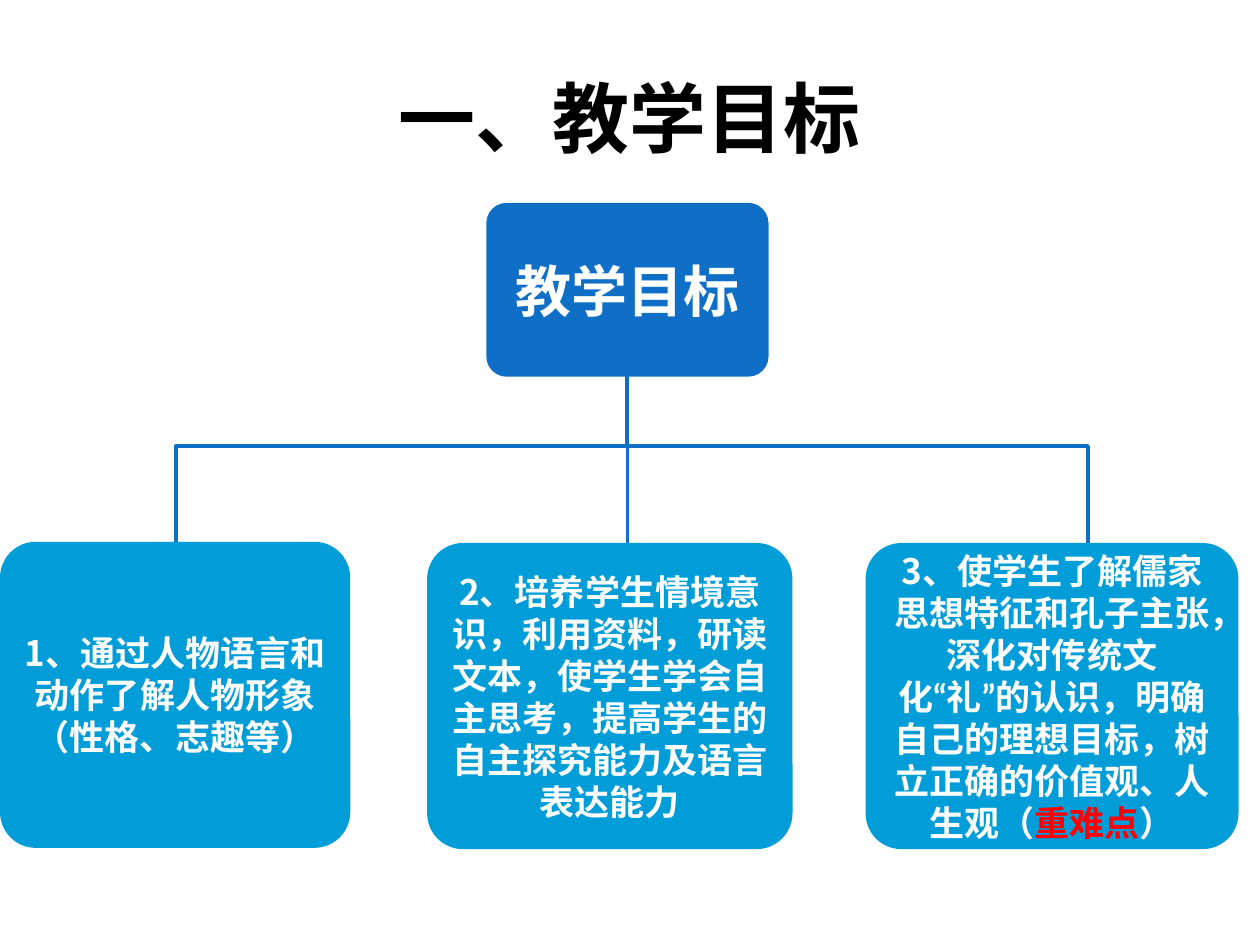
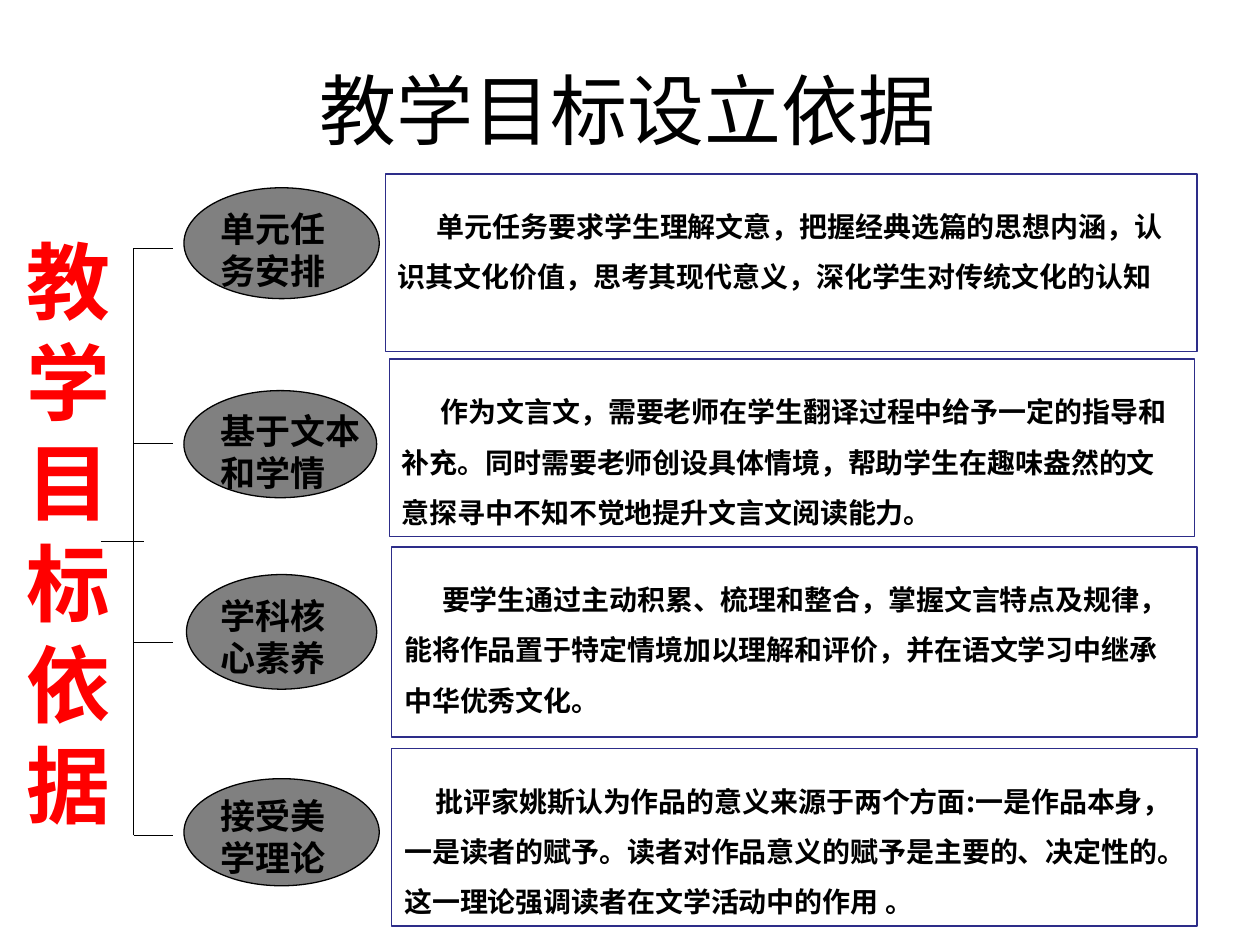
import pptx
import pptx.util
import pptx.dml.color
import pptx.enum.shapes
import pptx.enum.text
import pptx.oxml
import pptx.oxml.ns

PX = 9144
RGB = pptx.dml.color.RGBColor
BLACK = RGB(0x00, 0x00, 0x00)
WHITE = RGB(0xFF, 0xFF, 0xFF)
RED = RGB(0xFF, 0x00, 0x00)
BLUE = RGB(0x0F, 0x6F, 0xC6)
CYAN = RGB(0x00, 0x9D, 0xD9)
GRAY = RGB(0x80, 0x80, 0x80)
NAVY = RGB(0x2D, 0x2D, 0x89)
CJK, LATO, ARIAL = "Noto Sans CJK SC", "Lato", "Arial"
SHAPE = pptx.enum.shapes.MSO_SHAPE
LINK = pptx.enum.shapes.MSO_CONNECTOR
ALIGN = pptx.enum.text.PP_ALIGN
ANCHOR = pptx.enum.text.MSO_ANCHOR


class Deck:
    """Presentation style and the slide being filled."""

    def __init__(self):
        self.prs = pptx.Presentation()
        self.prs.slide_width, self.prs.slide_height = 1000 * PX, 750 * PX

    def slide(self, title, left, top, bold):
        self.s = self.prs.slides.add_slide(self.prs.slide_layouts[6])
        self.text(left, top, 900, 125, [(title, BLACK)], 44, ARIAL, bold,
                  ALIGN.CENTER, ANCHOR.MIDDLE)

    def fill_text(self, sp, runs, size, font, bold=True, align=ALIGN.LEFT,
                  anchor=ANCHOR.TOP, top=5, indent=0, spacing=None):
        tf = sp.text_frame
        frame = dict(word_wrap=True, vertical_anchor=anchor,
                     margin_left=10 * PX, margin_right=10 * PX,
                     margin_top=top * PX, margin_bottom=5 * PX)
        for name, value in frame.items():
            setattr(tf, name, value)
        p = tf.paragraphs[0]
        p.alignment, p.line_spacing = align, spacing
        if indent:
            p._p.get_or_add_pPr().set("indent", str(indent * PX))
        fmt = dict(size=pptx.util.Pt(size), bold=bold, name=font)
        for text, color in runs:
            r = p.add_run()
            r.text = text
            for name, value in fmt.items():
                setattr(r.font, name, value)
            r.font.color.rgb = color
            ea = pptx.oxml.parse_xml(
                f'<a:ea {pptx.oxml.ns.nsdecls("a")} typeface="{LATO}"/>')
            r._r.get_or_add_rPr().append(ea)

    def text(self, x, y, w, h, *args, **kwargs):
        sp = self.s.shapes.add_textbox(x * PX, y * PX, w * PX, h * PX)
        self.fill_text(sp, *args, **kwargs)

    def shape(self, kind, x, y, w, h, fill=None, line=None):
        sp = self.s.shapes.add_shape(kind, x * PX, y * PX, w * PX, h * PX)
        sp.shadow.inherit = False
        if fill is None:
            sp.fill.background()
        else:
            sp.fill.solid()
            sp.fill.fore_color.rgb = fill
        if line is None:
            sp.line.fill.background()
        else:
            sp.line.color.rgb = line
            sp.line.width = pptx.util.Pt(0.75)
        return sp

    def card(self, x, y, w, h, fill, runs, size):
        sp = self.shape(SHAPE.ROUNDED_RECTANGLE, x, y, w, h, fill)
        sp.adjustments[0] = 0.117
        self.fill_text(sp, runs, size, CJK, align=ALIGN.CENTER, anchor=ANCHOR.MIDDLE)

    def line(self, x1, y1, x2, y2, color=BLACK, width=0.75, kind=LINK.STRAIGHT):
        c = self.s.shapes.add_connector(kind, x1 * PX, y1 * PX, x2 * PX, y2 * PX)
        c.line.color.rgb = color
        c.line.width = pptx.util.Pt(width)
        c._element.spPr.append(pptx.oxml.parse_xml(
            f'<a:effectLst {pptx.oxml.ns.nsdecls("a")}/>'))
        return c

    def branch(self, x1, y1, x2, y2):
        w, h = y2 - y1, abs(x2 - x1)
        x, y = (x1 + x2 - w) // 2, (y1 + y2 - h) // 2
        c = self.line(x, y, x + w, y + h, BLUE, 2, LINK.ELBOW)
        turn = dict(rot="16200000", flipH="1") if x2 > x1 else dict(rot="5400000")
        for name, value in turn.items():
            c._element.spPr.xfrm.set(name, value)


def goals(d):
    d.slide("一、教学目标", 50, 30, True)
    d.line(498, 299, 498, 445, BLUE, 2)
    d.branch(498, 264, 864, 445)
    d.branch(498, 264, 140, 445)
    d.card(386, 161, 224, 138, BLUE, [("教学目标", WHITE)], 32)
    cards = [
        (0, 430, 278, [("1、通过人物语言和动作了解人物形象（性格、志趣等）", WHITE)]),
        (339, 431, 290, [("2、培养学生情境意识，利用资料，研读文本，使学生学会自主思考，"
                          "提高学生的自主探究能力及语言表达能力", WHITE)]),
        (687, 431, 296, [("3、使学生了解儒家思想特征和孔子主张，深化对传统文化“礼”的认识，"
                          "明确自己的理想目标，树立正确的价值观、人生观（", WHITE),
                         ("重难点", RED), ("）", WHITE)]),
    ]
    for x, y, w, runs in cards:
        d.card(x, y, w, 243, CYAN, runs, 20)


def grounds(d):
    d.slide("教学目标设立依据", 48, 24, False)
    d.line(80, 430, 114, 430)
    d.line(106, 663, 106, 197)
    for y in (197, 352, 510, 663):
        d.line(106, y, 137, y)
    rows = [
        ((146, 149, 155, 88), (160, 123), "单元任务安排", LATO,
         (306, 138, 644, 141), 31, LATO,
         "单元任务要求学生理解文意，把握经典选篇的思想内涵，认识其文化价值，"
         "思考其现代意义，深化学生对传统文化的认知"),
        ((146, 310, 153, 85), (320, 134), "基于文本和学情", CJK,
         (309, 285, 639, 141), 31, CJK,
         "作为文言文，需要老师在学生翻译过程中给予一定的指导和补充。同时需要老师创设具体情境，"
         "帮助学生在趣味盎然的文意探寻中不知不觉地提升文言文阅读能力。"),
        ((148, 456, 151, 91), (467, 114), "学科核心素养", CJK,
         (311, 434, 639, 151), 30, CJK,
         "要学生通过主动积累、梳理和整合，掌握文言特点及规律，能将作品置于特定情境加以理解和评价，"
         "并在语文学习中继承中华优秀文化。"),
        ((146, 618, 155, 85), (626, 118), "接受美学理论", CJK,
         (311, 594, 639, 141), 25, CJK,
         "批评家姚斯认为作品的意义来源于两个方面:一是作品本身，一是读者的赋予。"
         "读者对作品意义的赋予是主要的、决定性的。这一理论强调读者在文学活动中的作用 。"),
    ]
    for oval, (y, w), label, label_font, box, indent, font, body in rows:
        d.shape(SHAPE.OVAL, *oval, GRAY, BLACK)
        d.text(165, y, w, 77, [(label, BLACK)], 20, label_font)
        sp = d.shape(SHAPE.RECTANGLE, *box, line=NAVY)
        d.fill_text(sp, [(body, BLACK)], 16, font, top=15, indent=indent, spacing=1.5)
    d.text(11, 177, 95, 505, [("教学目标依据", RED)], 48, CJK)


def main():
    d = Deck()
    goals(d)
    grounds(d)
    d.prs.save("out.pptx")


if __name__ == "__main__":
    main()
